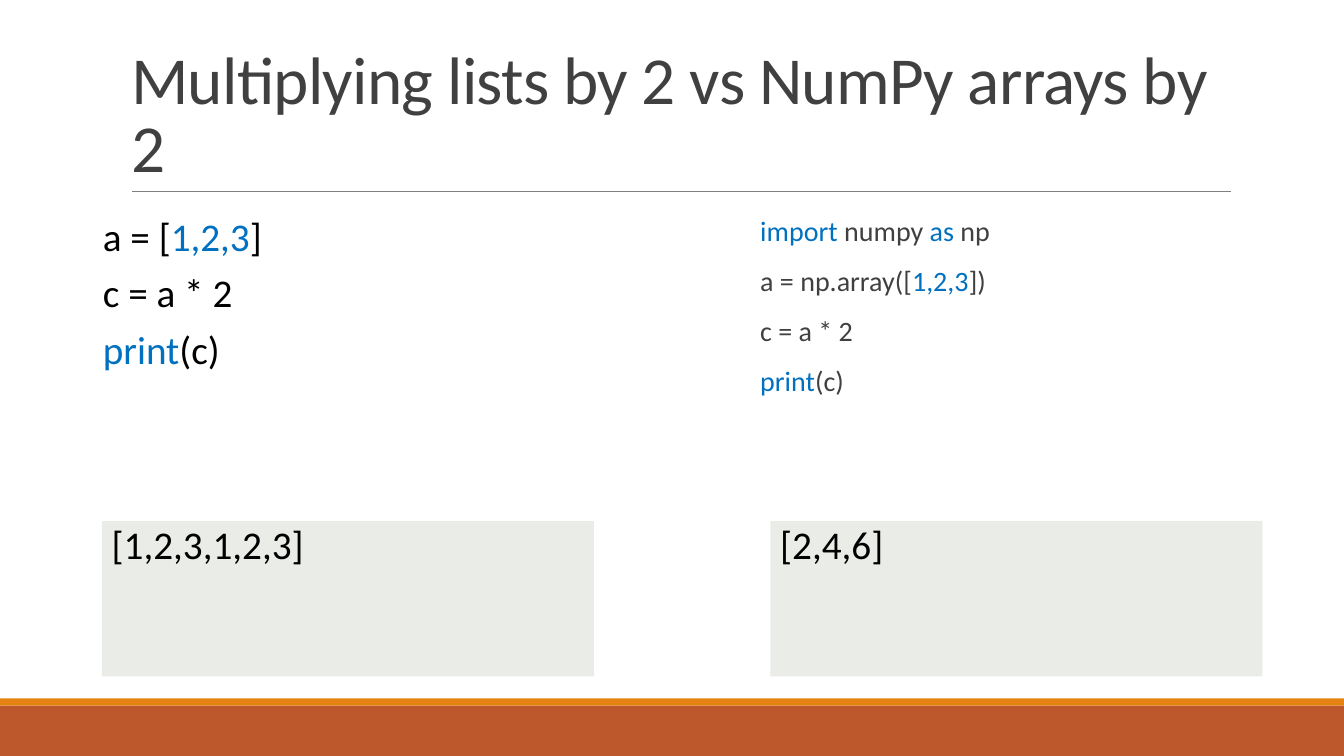
from dataclasses import dataclass

from lxml import etree
from pptx import Presentation
from pptx.dml.color import RGBColor
from pptx.enum.shapes import MSO_CONNECTOR, MSO_SHAPE
from pptx.enum.text import MSO_ANCHOR, MSO_AUTO_SIZE, PP_ALIGN
from pptx.oxml.ns import qn
from pptx.util import Inches, Pt

LEFT = PP_ALIGN.LEFT
TOP, BOTTOM = MSO_ANCHOR.TOP, MSO_ANCHOR.BOTTOM
NO_AUTOFIT = MSO_AUTO_SIZE.NONE
RECTANGLE = MSO_SHAPE.RECTANGLE
STRAIGHT = MSO_CONNECTOR.STRAIGHT

TWO_CONTENT_LAYOUT = 3
FONT = "Calibri"
BLACK, GREY, BLUE = "000000", "404040", "0070C0"
RUST, ORANGE, PALE, RULE_GREY = "BD582C", "E48312", "EAECE7", "808080"


@dataclass(frozen=True)
class Span:
    text: str
    highlighted: bool = False


@dataclass(frozen=True)
class Example:
    """One column: code in a body placeholder, its output in a box below."""
    code_left: float
    output_left: float
    inset: float
    size: int
    color: str
    space_before: int
    space_after: int
    code: tuple
    output: str


@dataclass(frozen=True)
class Band:
    top: float
    height: float
    color: str


NUMBERS = Span("1,2,3", True)
DOUBLE = (Span("c = a * 2"),)
PRINT = (Span("print", True), Span("(c)"))

EXAMPLES = (
    Example(0.92, 1.01, 0.1, 28, BLACK, 10, 0,
            ((Span("a = ["), NUMBERS, Span("]")), DOUBLE, PRINT),
            "[1,2,3,1,2,3]"),
    Example(7.54, 7.64, 0, 20, GREY, 12, 2,
            ((Span("import ", True), Span("numpy "), Span("as", True), Span(" np")),
             (Span("a = np.array(["), NUMBERS, Span("])")), DOUBLE, PRINT),
            "[2,4,6]"),
)
BANDS = (Band(7, 0.5, RUST), Band(6.93, 0.07, ORANGE))


def rgb(color: str) -> RGBColor:
    return RGBColor.from_string(color)


def place(shape, left: float, top: float, width: float, height: float) -> None:
    shape.left, shape.top = Inches(left), Inches(top)
    shape.width, shape.height = Inches(width), Inches(height)


def set_frame(frame, anchor, inset: float = 0.1) -> None:
    frame.word_wrap = True
    frame.auto_size = NO_AUTOFIT
    frame.vertical_anchor = anchor
    frame.margin_left = frame.margin_right = Inches(inset)
    frame.margin_top = frame.margin_bottom = Inches(0.05)


def format_paragraph(para, size: int, color: str, line_spacing: float = 0.9,
                     before: int = 0, after: int = 0) -> None:
    para.alignment = LEFT
    para.line_spacing = line_spacing
    para.space_before, para.space_after = Pt(before), Pt(after)
    para.font.name, para.font.size = FONT, Pt(size)
    para.font.color.rgb = rgb(color)


def remove_bullet(para) -> None:
    properties = para._p.get_or_add_pPr()
    properties.set("marL", "0")
    properties.set("indent", "0")
    bullet = etree.Element(qn("a:buNone"))
    properties.find(qn("a:defRPr")).addprevious(bullet)


def add_rectangle(page, left: float, top: float, width: float, height: float,
                  color: str):
    box = page.shapes.add_shape(RECTANGLE, Inches(left), Inches(top),
                                Inches(width), Inches(height))
    box.shadow.inherit = False
    box.fill.solid()
    box.fill.fore_color.rgb = rgb(color)
    box.line.fill.background()
    return box


def add_title_rule(page) -> None:
    rule = page.shapes.add_connector(STRAIGHT, Inches(1.31), Inches(1.9),
                                     Inches(12.21), Inches(1.9))
    rule.line.color.rgb = rgb(RULE_GREY)
    rule.line.width = Pt(0.5)
    etree.SubElement(rule._element.spPr, qn("a:effectLst"))


def fill_title(title, text: str) -> None:
    place(title, 1.2, 0.31, 11, 1.59)
    set_frame(title.text_frame, BOTTOM)
    para = title.text_frame.paragraphs[0]
    span = para.add_run()
    span.text = text
    format_paragraph(para, 48, GREY, 0.85)
    span.font._element.set("spc", "-50")


def fill_code(body, example: Example) -> None:
    place(body, example.code_left, 2.11, 4.88, 2.83)
    frame = body.text_frame
    set_frame(frame, TOP, example.inset)
    for index, line in enumerate(example.code):
        para = frame.add_paragraph() if index else frame.paragraphs[0]
        format_paragraph(para, example.size, example.color,
                         before=example.space_before, after=example.space_after)
        remove_bullet(para)
        for part in line:
            span = para.add_run()
            span.text = part.text
            span.font.name, span.font.size = FONT, Pt(example.size)
            span.font.color.rgb = rgb(BLUE if part.highlighted else example.color)


def add_output(page, example: Example) -> None:
    box = add_rectangle(page, example.output_left, 5.17, 4.88, 1.54, PALE)
    set_frame(box.text_frame, TOP)
    para = box.text_frame.paragraphs[0]
    span = para.add_run()
    span.text = example.output
    format_paragraph(para, 28, BLACK, before=10)
    span.font.name, span.font.size = FONT, Pt(28)
    span.font.color.rgb = rgb(BLACK)


def main() -> None:
    deck = Presentation()
    deck.slide_width, deck.slide_height = Inches(13.33), Inches(7.5)
    page = deck.slides.add_slide(deck.slide_layouts[TWO_CONTENT_LAYOUT])
    title, *bodies = list(page.placeholders)[:3]

    for band in BANDS:
        add_rectangle(page, 0, band.top, 13.33, band.height, band.color)
    add_title_rule(page)
    fill_title(title, "Multiplying lists by 2 vs NumPy arrays by 2")
    for body, example in zip(bodies, EXAMPLES):
        fill_code(body, example)
        add_output(page, example)

    deck.save("out.pptx")


if __name__ == "__main__":
    main()
